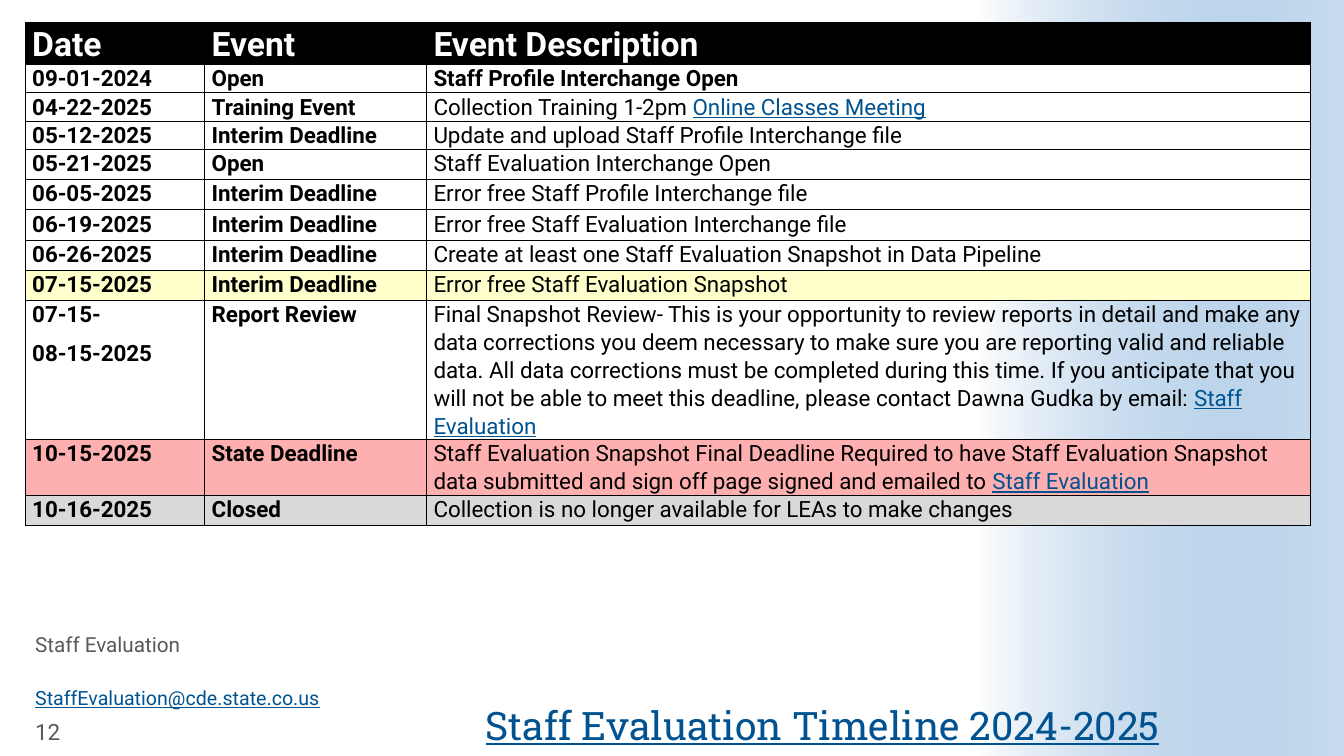
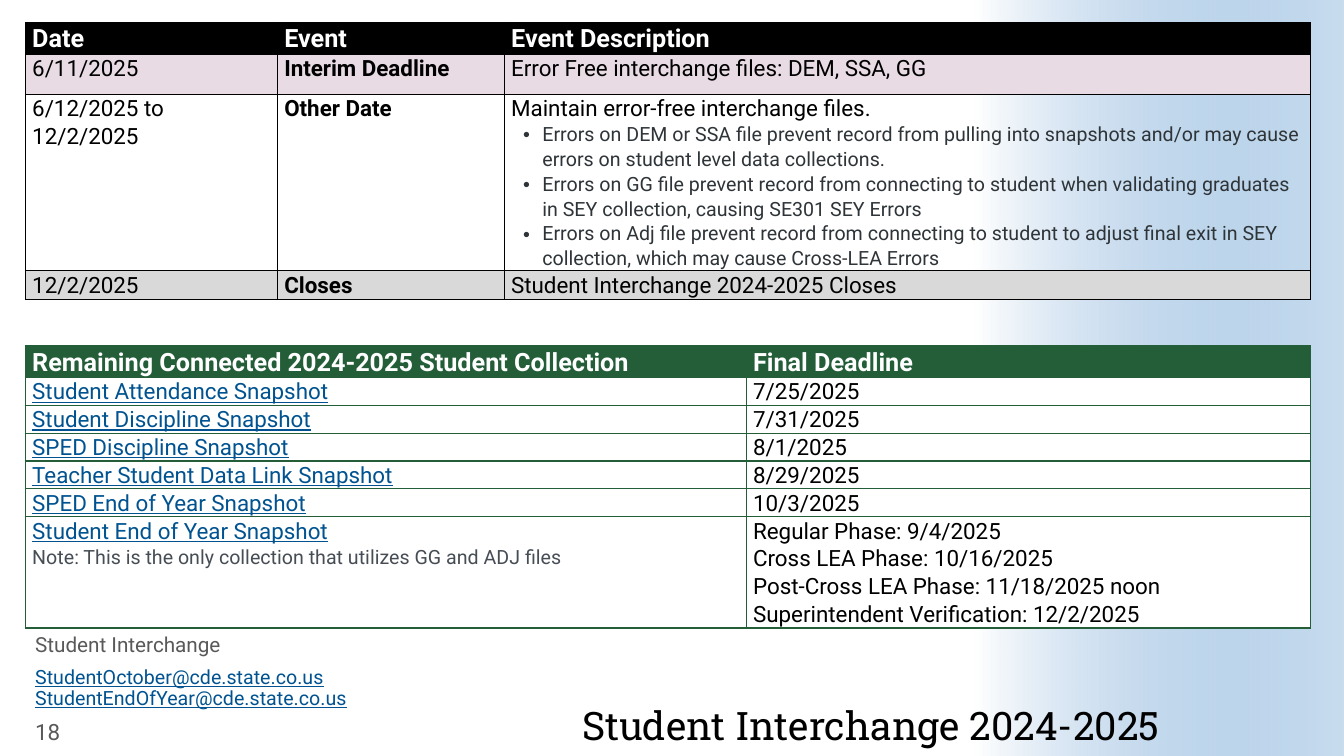
from dataclasses import dataclass

from lxml import etree
from pptx import Presentation
from pptx.dml.color import RGBColor
from pptx.enum.shapes import MSO_SHAPE
from pptx.enum.text import MSO_ANCHOR, MSO_AUTO_SIZE, PP_ALIGN
from pptx.oxml import parse_xml
from pptx.oxml.ns import nsdecls, qn
from pptx.util import Inches, Pt

RECTANGLE = MSO_SHAPE.RECTANGLE
TOP, MIDDLE, BOTTOM = MSO_ANCHOR.TOP, MSO_ANCHOR.MIDDLE, MSO_ANCHOR.BOTTOM
LEFT, RIGHT = PP_ALIGN.LEFT, PP_ALIGN.RIGHT
NO_FIT = MSO_AUTO_SIZE.NONE

# Shared measures, in inches
SLIDE_WIDTH, SLIDE_HEIGHT = 13.33, 7.5
MARGIN, TABLE_TOP = 0.25, 0.22
TABLE_WIDTH = 12.75
TITLE_BOX = (4.26, 6.45, 7.24, 0.98)
NAME_BOX = (MARGIN, 6.27, 4.01, 0.31)
EMAIL_BOX = (MARGIN, 6.57, 3.89, 0.52)
NUMBER_BOX = (MARGIN, 7.1, 0.85, 0.31)
GLOW_WIDTH = 3.66
INSETS = (0.1, 0.05, 0.1, 0.05)
CELL_INSETS = (0.07, 0, 0.07, 0)

# Shared fonts and colours
BODY_FONT, TITLE_FONT = "Roboto", "Roboto Slab"
BLACK, WHITE, GREY, BLUE, GREEN = "000000", "FFFFFF", "595959", "005390", "235E39"
YELLOW, RED, SILVER, MAUVE = "FFFFCC", "FEB0B0", "D9D9D9", "E8DBE4"
BULLET_GREY, NOTE_GREY = "2E3438", "464D54"


@dataclass
class Span:
    """Text with the format that differs from its surroundings."""
    text: str
    color: str = None
    size: float = None
    underline: bool = False
    bullet: bool = False


def link(text):
    return Span(text, color=BLUE, underline=True)


def bullet(text):
    return Span(text, color=BULLET_GREY, size=14, bullet=True)


def rgb(color):
    return RGBColor.from_string(color)


def add_bullet(paragraph):
    properties = paragraph._p.get_or_add_pPr()
    properties.set("marL", str(Inches(0.31)))
    properties.set("indent", str(-Inches(0.19)))
    etree.SubElement(properties, qn("a:buFont")).set("typeface", "Arial")
    etree.SubElement(properties, qn("a:buChar")).set("char", "•")


def write_text(frame, paragraphs, size=16, color=BLACK, bold=False, font=BODY_FONT,
               align=LEFT, spacing=1.0, gap=0):
    """Fill a frame; each paragraph is a string, a Span or a list of both."""
    frame.word_wrap = True
    if not isinstance(paragraphs, list):
        paragraphs = [paragraphs]
    for index, spans in enumerate(paragraphs):
        paragraph = frame.add_paragraph() if index else frame.paragraphs[0]
        spans = spans if isinstance(spans, list) else [spans]
        spans = [Span(span) if isinstance(span, str) else span for span in spans]
        if spans[0].bullet:
            add_bullet(paragraph)
        paragraph.alignment = align
        paragraph.line_spacing = spacing
        paragraph.space_before = Pt(0)
        paragraph.space_after = Pt(gap)
        for span in spans:
            run = paragraph.add_run()
            run.text = span.text
            run.font.name = font
            run.font.size = Pt(span.size or size)
            run.font.bold = bold
            run.font.underline = span.underline
            run.font.color.rgb = rgb(span.color or color)


def set_frame(frame, insets, anchor):
    frame.margin_left, frame.margin_top, frame.margin_right, frame.margin_bottom = (
        Inches(inset) for inset in insets)
    frame.vertical_anchor = anchor
    frame.auto_size = NO_FIT


def add_text(slide, box, paragraphs, anchor=TOP, **text_format):
    shape = slide.shapes.add_textbox(*map(Inches, box))
    set_frame(shape.text_frame, INSETS, anchor)
    write_text(shape.text_frame, paragraphs, **text_format)


def add_borders(cell, color, width):
    properties = cell._tc.get_or_add_tcPr()
    for side in ("lnL", "lnR", "lnT", "lnB"):
        line = etree.SubElement(properties, qn(f"a:{side}"), w=str(Pt(width)))
        fill = etree.SubElement(line, qn("a:solidFill"))
        etree.SubElement(fill, qn("a:srgbClr"), val=color)


def format_cell(cell, content, fill, border, **text_format):
    cell.margin_left, cell.margin_top, cell.margin_right, cell.margin_bottom = (
        Inches(inset) for inset in CELL_INSETS)
    cell.vertical_anchor = TOP
    add_borders(cell, *border)
    if fill:
        cell.fill.solid()
        cell.fill.fore_color.rgb = rgb(fill)
    else:
        cell.fill.background()
    write_text(cell.text_frame, content, spacing=1.07, **text_format)


def add_grid(slide, top, columns, header, rows, header_size, header_row=0.31,
             theme=BLACK, border_width=0.5, bold_columns=(), gap=0):
    """Add a table; each row is (height, fill, cells)."""
    rows = [(header_row, theme, header)] + rows
    height = sum(row[0] for row in rows)
    frame = slide.shapes.add_table(len(rows), len(columns), Inches(MARGIN), Inches(top),
                                   Inches(TABLE_WIDTH), Inches(height))
    table = frame.table
    table.horz_banding = False
    for column, width in zip(table.columns, columns):
        column.width = Inches(width)
    for row_index, (row_height, fill, contents) in enumerate(rows):
        table.rows[row_index].height = Inches(row_height)
        is_header = row_index == 0
        for column_index, content in enumerate(contents):
            format_cell(table.cell(row_index, column_index), content, fill,
                        (theme, border_width),
                        size=header_size if is_header else 16,
                        color=WHITE if is_header else BLACK,
                        bold=is_header or column_index in bold_columns, gap=gap)


def add_glow(layout, slide):
    """Put the blue fade at the right edge behind everything on the layout."""
    left = SLIDE_WIDTH - (SLIDE_HEIGHT + GLOW_WIDTH) / 2
    top = (SLIDE_HEIGHT - GLOW_WIDTH) / 2
    shape = slide.shapes.add_shape(
        RECTANGLE, *map(Inches, (left, top, SLIDE_HEIGHT, GLOW_WIDTH)))
    shape.rotation = 270
    shape.shadow.inherit = False
    shape.line.fill.background()
    gradient = parse_xml(
        f'<a:gradFill {nsdecls("a")} rotWithShape="1"><a:gsLst>'
        f'<a:gs pos="0"><a:srgbClr val="{WHITE}"/></a:gs>'
        '<a:gs pos="100000"><a:srgbClr val="488BC9"><a:alpha val="30000"/></a:srgbClr></a:gs>'
        '</a:gsLst><a:lin ang="5400000" scaled="0"/></a:gradFill>')
    shape._element.spPr.find(qn("a:prstGeom")).addnext(gradient)
    layout.shapes._spTree.insert(2, shape._element)


def add_page(presentation, layout, title, name, emails, number):
    """Add a slide with its title at the foot and the contact block beside it."""
    slide = presentation.slides.add_slide(layout)
    heading = slide.shapes.title
    heading.left, heading.top, heading.width, heading.height = map(Inches, TITLE_BOX)
    set_frame(heading.text_frame, (0, 0, 0, 0), BOTTOM)
    write_text(heading.text_frame, title, size=28, font=TITLE_FONT, align=RIGHT, spacing=0.9)
    add_text(slide, NAME_BOX, name, size=14.8, color=GREY, spacing=0.8)
    add_text(slide, EMAIL_BOX, [link(email) for email in emails], anchor=BOTTOM,
             size=14, spacing=0.9)
    add_text(slide, NUMBER_BOX, number, anchor=MIDDLE, color=GREY)
    return slide


def add_evaluation_table(slide):
    deadline = "Interim Deadline"
    contact = link("Staff Evaluation")
    opening = [Span("Staff Profile Interchange Open")]
    rows = [
        (0.28, WHITE, ["09-01-2024", "Open", opening]),
        (0.28, WHITE, ["04-22-2025", "Training Event",
                       [["Collection Training 1-2pm ", link("Online Classes Meeting")]]]),
        (0.28, WHITE, ["05-12-2025", deadline,
                       "Update and upload Staff Profile Interchange file"]),
        (0.3, WHITE, ["05-21-2025", "Open", "Staff Evaluation Interchange Open"]),
        (0.3, WHITE, ["06-05-2025", deadline, "Error free Staff Profile Interchange file"]),
        (0.3, WHITE, ["06-19-2025", deadline,
                      "Error free Staff Evaluation Interchange file"]),
        (0.3, WHITE, ["06-26-2025", deadline,
                      "Create at least one Staff Evaluation Snapshot in Data Pipeline"]),
        (0.3, YELLOW, ["07-15-2025", deadline, "Error free Staff Evaluation Snapshot"]),
        (1.38, None, [["07-15-", "08-15-2025"], "Report Review", [[
            "Final Snapshot Review- This is your opportunity to review reports in detail "
            "and make any data corrections you deem necessary to make sure you are "
            "reporting valid and reliable data. All data corrections must be completed "
            "during this time. If you anticipate that you will not be able to meet this "
            "deadline, please contact Dawna Gudka by email: ", contact]]]),
        (0.55, RED, ["10-15-2025", "State Deadline", [[
            "Staff Evaluation Snapshot Final Deadline Required to have Staff Evaluation "
            "Snapshot data submitted and sign off page signed and emailed to ", contact]]]),
        (0.3, SILVER, ["10-16-2025", "Closed",
                       "Collection is no longer available for LEAs to make changes"]),
    ]
    add_grid(slide, TABLE_TOP, (1.78, 2.2, 8.77), ["Date", "Event", "Event Description"],
             rows, header_size=24, header_row=0.42, bold_columns=(0, 1), gap=8)
    # The opening event is bold across its whole row
    table = slide.shapes[-1].table
    table.cell(1, 2).text_frame.paragraphs[0].runs[0].font.bold = True


def add_interchange_table(slide):
    rows = [
        (0.4, MAUVE, ["6/11/2025", "Interim Deadline",
                      "Error Free interchange files: DEM, SSA, GG"]),
        (1.75, None, ["6/12/2025 to 12/2/2025", "Other Date", [
            "Maintain error-free interchange files.",
            bullet("Errors on DEM or SSA file prevent record from pulling into snapshots "
                   "and/or may cause errors on student level data collections."),
            bullet("Errors on GG file prevent record from connecting to student when "
                   "validating graduates in SEY collection, causing SE301 SEY Errors"),
            bullet("Errors on Adj file prevent record from connecting to student to adjust "
                   "final exit in SEY collection, which may cause Cross-LEA Errors")]]),
        (0.28, SILVER, ["12/2/2025", "Closes", "Student Interchange 2024-2025 Closes"]),
    ]
    add_grid(slide, TABLE_TOP, (2.5, 2.25, 8), ["Date", "Event", "Event Description"],
             rows, header_size=18, bold_columns=(1,))


def add_collection_table(slide):
    deadlines = {
        "Student Attendance": "7/25/2025",
        "Student Discipline": "7/31/2025",
        "SPED Discipline": "8/1/2025",
        "Teacher Student Data Link": "8/29/2025",
        "SPED End of Year": "10/3/2025",
    }
    rows = [(0.27, WHITE, [link(f"{name} Snapshot"), date])
            for name, date in deadlines.items()]
    note = Span("Note: This is the only collection that utilizes GG and ADJ files",
                color=NOTE_GREY, size=14)
    rows.append((1.1, WHITE, [
        [link("Student End of Year Snapshot"), note],
        ["Regular Phase: 9/4/2025", "Cross LEA Phase: 10/16/2025",
         "Post-Cross LEA Phase: 11/18/2025 noon",
         "Superintendent Verification: 12/2/2025"]]))
    add_grid(slide, 3.43, (7.15, 5.6),
             ["Remaining Connected 2024-2025 Student Collection", "Final Deadline"],
             rows, header_size=18, theme=GREEN, border_width=1)


def main():
    presentation = Presentation()
    presentation.slide_width = Inches(SLIDE_WIDTH)
    presentation.slide_height = Inches(SLIDE_HEIGHT)
    layout = presentation.slide_layouts.get_by_name("Title Only")

    evaluation = add_page(presentation, layout, link("Staff Evaluation Timeline 2024-2025"),
                          "Staff Evaluation", ["StaffEvaluation@cde.state.co.us"], "12")
    add_glow(layout, evaluation)
    add_evaluation_table(evaluation)

    interchange = add_page(
        presentation, layout, "Student Interchange 2024-2025", "Student Interchange",
        ["StudentOctober@cde.state.co.us", "StudentEndOfYear@cde.state.co.us"], "18")
    add_interchange_table(interchange)
    add_collection_table(interchange)

    presentation.save("out.pptx")


if __name__ == "__main__":
    main()
